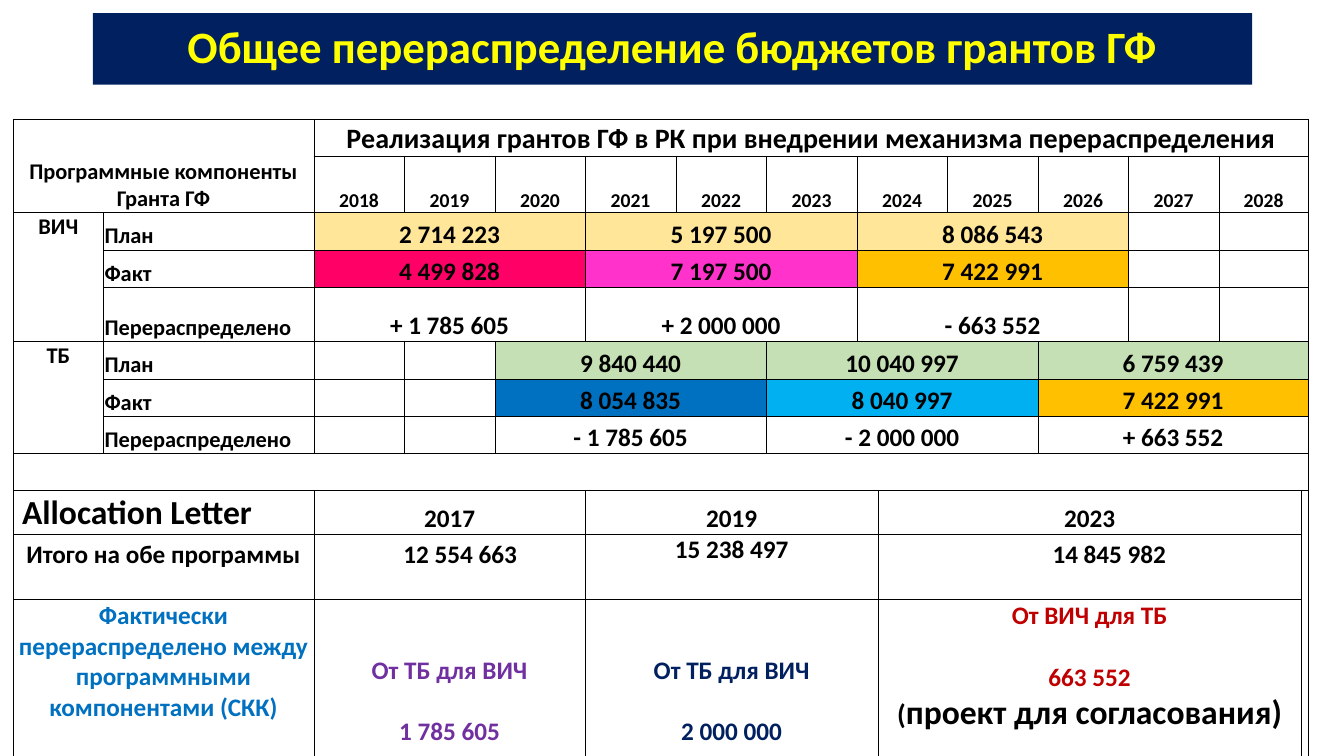
from lxml import etree
from pptx import Presentation
from pptx.dml.color import RGBColor
from pptx.enum.text import MSO_ANCHOR, PP_ALIGN
from pptx.oxml.ns import qn
from pptx.util import Inches, Pt

LEFT, CENTER = PP_ALIGN.LEFT, PP_ALIGN.CENTER
TOP, MIDDLE, BOTTOM = MSO_ANCHOR.TOP, MSO_ANCHOR.MIDDLE, MSO_ANCHOR.BOTTOM

# Content
TITLE = "Общее перераспределение бюджетов грантов ГФ"
CORNER = "Программные компоненты Гранта ГФ"
HEADING = "Реализация грантов ГФ в РК при внедрении механизма перераспределения"
MEASURES = ["План", "Факт", "Перераспределено"]
# programme, first table row, period spans (column, columns), empty spans, values with fills
PROGRAMMES = [
    ("ВИЧ", 2, [(2, 3), (5, 3), (8, 4)], [(12, 1), (13, 2)], [
        [("2 714 223", "FFE699"), ("5 197 500", "FFE699"), ("8 086 543", "FFE699")],
        [("4 499 828", "FF0066"), ("7 197 500", "FF33CC"), ("7 422 991", "FFC000")],
        [("+ 1 785 605", None), ("+ 2 000 000", None), ("- 663 552", None)]]),
    ("ТБ", 5, [(4, 3), (7, 4), (11, 4)], [(2, 1), (3, 1)], [
        [("9 840 440", "C5E0B4"), ("10 040 997", "C5E0B4"), ("6 759 439", "C5E0B4")],
        [("8 054 835", "0070C0"), ("8 040 997", "00B0F0"), ("7 422 991", "FFC000")],
        [("- 1 785 605", None), ("- 2 000 000", None), ("+ 663 552", None)]]),
]
LETTER = "Аllocation Letter"
TOTAL = "Итого на обе программы"
MOVED = "Фактически перераспределено между программными компонентами (СКК)"
# year, span, total, left inset of total, direction, amount, colour
LETTERS = [
    ("2017", (2, 3), "12 554 663", 0.22, "От ТБ для ВИЧ", "1 785 605", "7030A0"),
    ("2019", (5, 4), "15 238 497", 0.01, "От ТБ для ВИЧ", "2 000 000", "002060"),
    ("2023", (9, 5), "14 845 982", 0.4, "От ВИЧ для ТБ", "663 552", "C00000"),
]
DRAFT = [("(", 20, "000000"), ("проект для согласования)", 24, "000000")]

# Grid
YEAR_SPANS = [(c, 1) for c in range(2, 8)] + [(8, 2), (10, 1), (11, 1), (12, 1), (13, 2)]
COLUMNS = [0.9, 2.09] + [0.9] * 6 + [0.21, 0.69] + [0.9] * 3 + [0.82, 0.07]
ROWS = [0.37, 0.56, 0.37, 0.37, 0.54, 0.37, 0.37, 0.37, 0.37, 0.43, 0.65, 1.57]
TABLE_LEFT, TABLE_TOP, TABLE_WIDTH = 0.13, 1.18, 12.85
INSETS = {"margin_left": 0.01, "margin_right": 0.01, "margin_top": 0.01, "margin_bottom": 0}


def color(value):
    return RGBColor.from_string(value)


def add_span(para, text, size, ink):
    span = para.add_run()
    span.text = text
    formats = {"name": "Calibri", "size": Pt(size), "bold": True}
    for name, value in formats.items():
        setattr(span.font, name, value)
    span.font.color.rgb = color(ink)


def add_borders(cell):
    properties = cell._tc.get_or_add_tcPr()
    for index, side in enumerate(("lnL", "lnR", "lnT", "lnB")):
        line = etree.Element(qn("a:" + side), w=str(Pt(0.5)))
        fill = etree.SubElement(line, qn("a:solidFill"))
        etree.SubElement(fill, qn("a:srgbClr"), val="000000")
        properties.insert(index, line)


def put(row, span, text="", size=18, fill=None, ink="000000", align=CENTER,
        anchor=BOTTOM, rows=1, **insets):
    """Merge the span if needed and write one cell."""
    column, columns = span
    cell = table.cell(row, column)
    if rows * columns > 1:
        cell.merge(table.cell(row + rows - 1, column + columns - 1))
    cell.vertical_anchor = anchor
    for name, value in insets.items():
        setattr(cell, name, Inches(value))
    if fill:
        cell.fill.solid()
        cell.fill.fore_color.rgb = color(fill)
    para = cell.text_frame.paragraphs[0]
    para.alignment = align
    if text:
        add_span(para, text, size, ink)
    return cell


def add_line(cell, spans, gap=0):
    para = cell.text_frame.add_paragraph()
    para.alignment = CENTER
    para.space_before = Pt(gap)
    for span in spans:
        add_span(para, *span)


deck = Presentation()
deck.slide_width, deck.slide_height = Inches(13.33), Inches(7.5)
page = deck.slides.add_slide(deck.slide_layouts[5])

# Title banner
banner = page.shapes.title
place = {"left": 0.92, "top": 0.13, "width": 11.5, "height": 0.71}
for name, value in place.items():
    setattr(banner, name, Inches(value))
banner.fill.solid()
banner.fill.fore_color.rgb = color("002060")
banner.text_frame.vertical_anchor = MIDDLE
banner.text_frame.word_wrap = True
headline = banner.text_frame.paragraphs[0]
headline.alignment, headline.line_spacing = CENTER, 0.9
add_span(headline, TITLE, 32, "FFFF00")

# Empty table grid
frame = page.shapes.add_table(len(ROWS), len(COLUMNS), Inches(TABLE_LEFT), Inches(TABLE_TOP),
                              Inches(TABLE_WIDTH), Inches(sum(ROWS)))
table = frame.table
table.first_row = table.horz_banding = False
for column, share in zip(table.columns, COLUMNS):
    column.width = Inches(TABLE_WIDTH * share / sum(COLUMNS))
for row, height in zip(table.rows, ROWS):
    row.height = Inches(height)
for cell in table.iter_cells():
    for name, value in INSETS.items():
        setattr(cell, name, Inches(value))
    cell.fill.background()
    add_borders(cell)

# Table header
put(0, (0, 2), CORNER, 16, rows=2)
put(0, (2, 13), HEADING, 20)
for year, span in enumerate(YEAR_SPANS, 2018):
    put(1, span, str(year), 14)

# Plan, fact and reallocation of each programme
for programme, first, periods, gaps, lines in PROGRAMMES:
    put(first, (0, 1), programme, 16, anchor=TOP, rows=3)
    for row, (measure, values) in enumerate(zip(MEASURES, lines), first):
        put(row, (1, 1), measure, 16, align=LEFT)
        for span in gaps:
            put(row, span)
        for span, (amount, fill) in zip(periods, values):
            put(row, span, amount, fill=fill)

# Allocation letters
put(8, (0, 15))
put(9, (0, 2), LETTER, 24, align=LEFT, margin_left=0.09)
put(10, (0, 2), TOTAL, anchor=TOP, margin_top=0.05)
put(11, (0, 2), MOVED, ink="0070C0", anchor=TOP)
put(9, (14, 1), rows=3)
for year, span, total, inset, direction, amount, ink in LETTERS:
    put(9, span, year)
    put(10, span, total, anchor=TOP, margin_left=inset,
        margin_top=0.01 if year == "2019" else 0.05)
    is_draft = year == "2023"
    cell = put(11, span, direction, ink=ink, anchor=TOP if is_draft else BOTTOM,
               margin_bottom=0 if is_draft else 0.1)
    add_line(cell, [(amount, 18, ink)], gap=22)
    if is_draft:
        add_line(cell, DRAFT)

deck.save("out.pptx")
